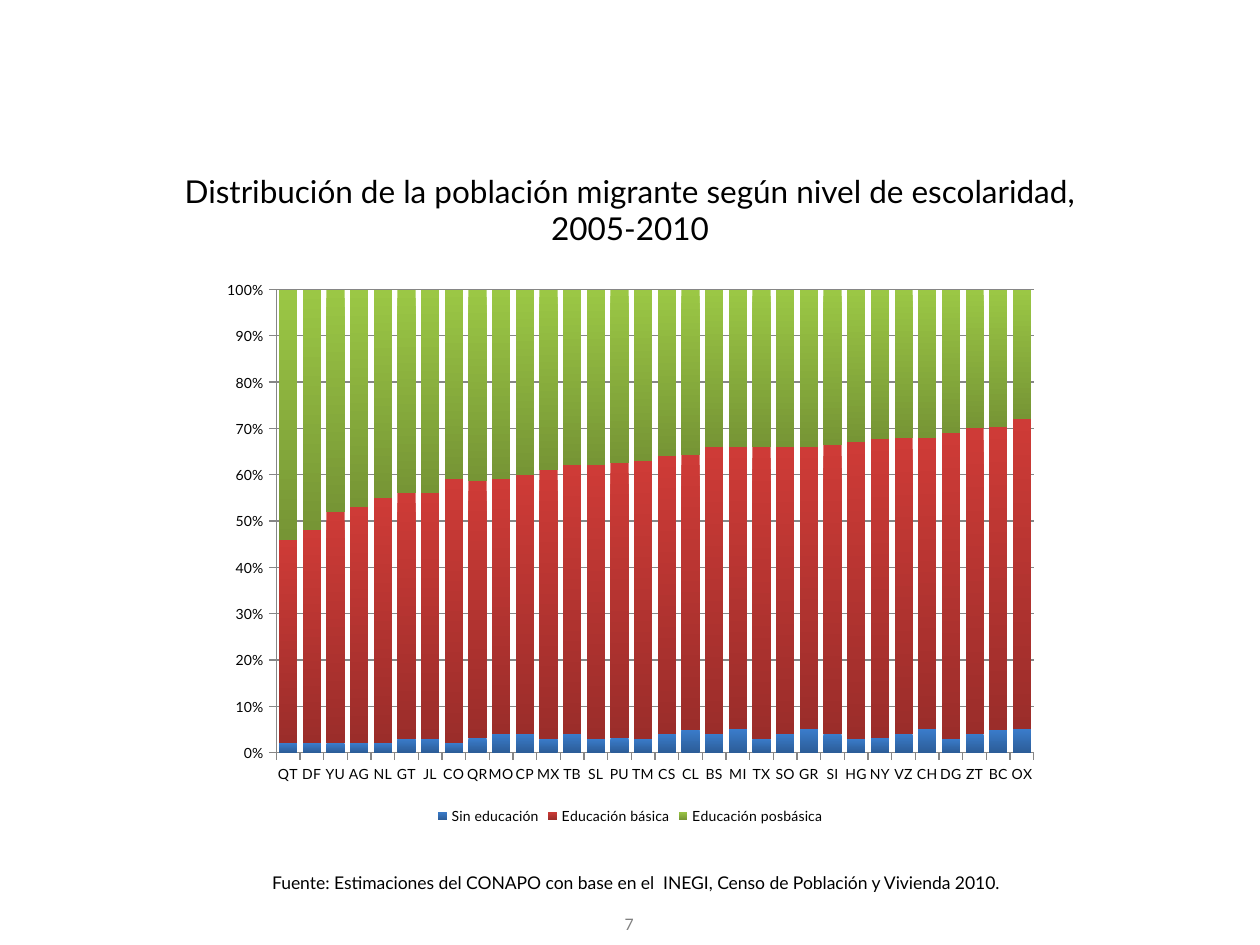
import pptx
import pptx.util
import pptx.dml.color
import pptx.chart.data
import pptx.enum.chart
import pptx.enum.text

Cm, Pt = pptx.util.Cm, pptx.util.Pt
FONT = "Lato"

TITLE = "Distribución de la población migrante según nivel de escolaridad, 2005-2010"
SOURCE = "Fuente: Estimaciones del CONAPO con base en el  INEGI, Censo de Población y Vivienda 2010."
PAGE = "7"
STATES = (
    "QT DF YU AG NL GT JL CO QR MO CP MX TB SL PU TM "
    "CS CL BS MI TX SO GR SI HG NY VZ CH DG ZT BC OX"
).split()
LEVELS = [
    ("Sin educación", "3A7CCB", "2C5D98",
     [2, 2, 2, 2, 2, 3, 3, 2, 3, 4, 4, 3, 4, 3, 3, 3,
      4, 5, 4, 5, 3, 4, 5, 4, 3, 3, 4, 5, 3, 4, 5, 5]),
    ("Educación básica", "CE3B37", "9B2D2A",
     [44, 46, 50, 51, 53, 53, 53, 57, 55, 55, 56, 58, 58, 59, 59, 60,
      60, 60, 62, 61, 63, 62, 61, 63, 64, 64, 64, 63, 66, 66, 66, 67]),
    ("Educación posbásica", "9BC745", "769535",
     [54, 52, 48, 47, 45, 44, 44, 41, 41, 41, 40, 39, 38, 38, 37, 37,
      36, 36, 34, 34, 34, 34, 34, 34, 33, 32, 32, 32, 31, 30, 30, 28]),
]


def paint(color, tone):
    color.rgb = pptx.dml.color.RGBColor.from_string(tone)


def style(font, size, tone):
    font.name, font.size = FONT, Pt(size)
    paint(font.color, tone)


def place(shape, left, top, width, height):
    shape.left, shape.top = Cm(left), Cm(top)
    shape.width, shape.height = Cm(width), Cm(height)


def write(shape, text, size, tone="000000"):
    frame = shape.text_frame
    frame.word_wrap = True
    frame.vertical_anchor = pptx.enum.text.MSO_ANCHOR.MIDDLE
    para = frame.paragraphs[0]
    para.alignment = pptx.enum.text.PP_ALIGN.CENTER
    run = para.add_run()
    run.text = text
    style(run.font, size, tone)


def label(slide, box, text, size, tone="000000"):
    shape = slide.shapes.add_textbox(*map(Cm, box))
    write(shape, text, size, tone)


def plot(slide):
    data = pptx.chart.data.CategoryChartData()
    data.categories = STATES
    for name, light, dark, vals in LEVELS:
        data.add_series(name, vals)
    kind = pptx.enum.chart.XL_CHART_TYPE.COLUMN_STACKED_100
    box = map(Cm, (4.24, 5.44, 16.94, 11.28))
    chart = slide.shapes.add_chart(kind, *box, data).chart
    style(chart.font, 8, "000000")
    chart.has_title = False
    chart.has_legend = True
    chart.legend.position = pptx.enum.chart.XL_LEGEND_POSITION.BOTTOM
    chart.legend.include_in_layout = False

    bars = chart.plots[0]
    bars.gap_width, bars.overlap = 30, 100
    bars.vary_by_categories = False
    for series, (name, light, dark, vals) in zip(bars.series, LEVELS):
        fill = series.format.fill
        fill.gradient()
        fill.gradient_angle = 270
        for stop, tone in zip(fill.gradient_stops, (light, dark)):
            paint(stop.color, tone)

    axis = chart.value_axis
    axis.minimum_scale, axis.maximum_scale, axis.major_unit = 0, 1, 0.1
    axis.has_major_gridlines = True
    axis.tick_labels.number_format = "0%"
    axis.tick_labels.number_format_is_linked = False
    for part in (axis, chart.category_axis):
        part.major_tick_mark = pptx.enum.chart.XL_TICK_MARK.OUTSIDE
    for part in (axis, axis.major_gridlines, chart.category_axis):
        part.format.line.width = Pt(0.75)
        paint(part.format.line.color, "868686")


def main():
    deck = pptx.Presentation()
    deck.slide_width, deck.slide_height = Cm(25.4), Cm(19.05)
    slide = deck.slides.add_slide(deck.slide_layouts[5])
    title = slide.shapes.title
    place(title, 3.3, 3.33, 18.8, 1.78)
    write(title, TITLE, 18)
    plot(slide)
    label(slide, (3.91, 17.45, 17.81, 0.69), SOURCE, 10)
    label(slide, (11.3, 18.21, 2.77, 0.84), PAGE, 9, "808080")
    deck.save("out.pptx")


if __name__ == "__main__":
    main()
